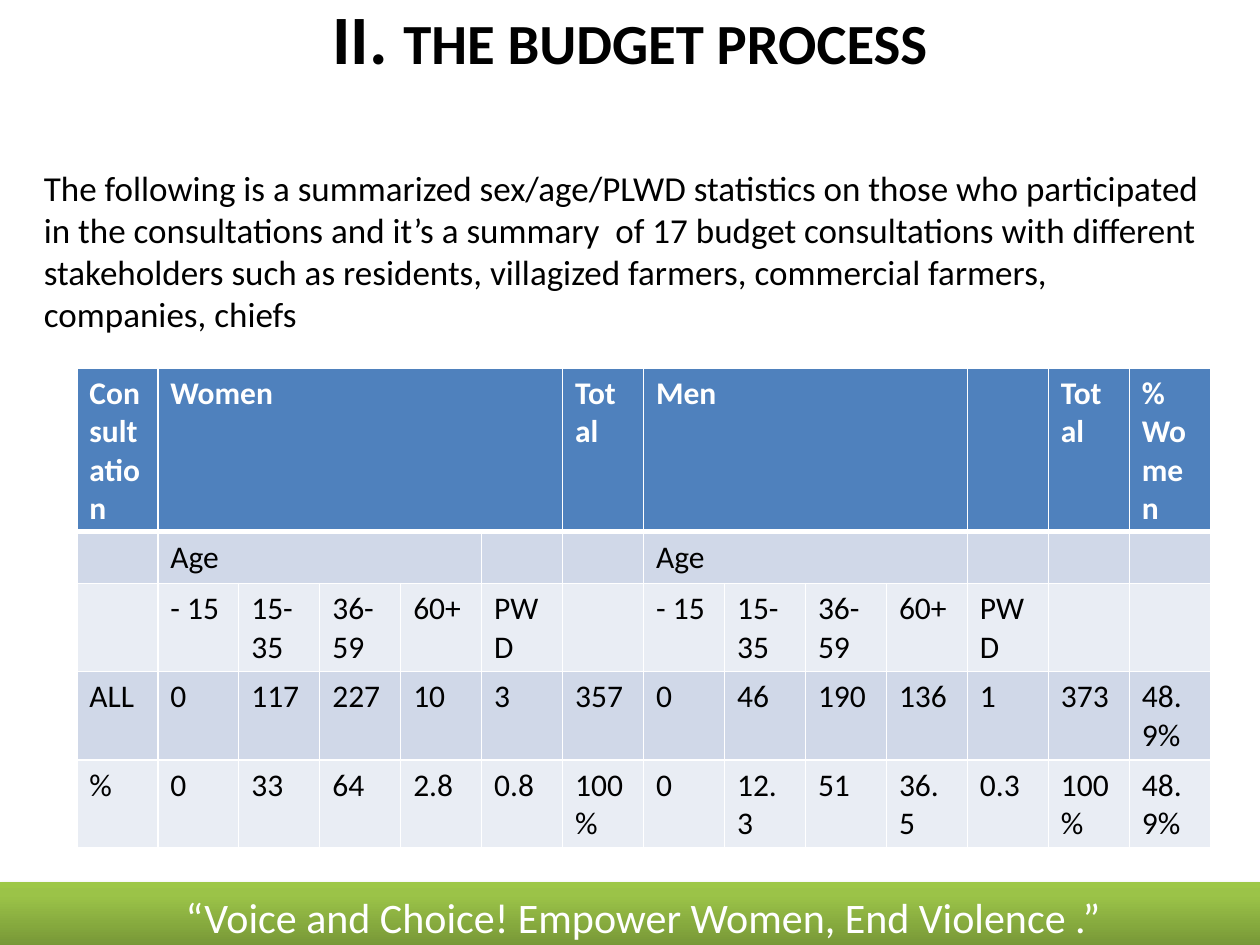
from pptx import Presentation
from pptx.dml.color import RGBColor
from pptx.enum.shapes import MSO_SHAPE
from pptx.enum.text import MSO_ANCHOR, PP_ALIGN
from pptx.oxml import parse_xml
from pptx.oxml.ns import nsdecls
from pptx.util import Inches, Pt

CENTER = PP_ALIGN.CENTER
BOTTOM = MSO_ANCHOR.BOTTOM
RECTANGLE = MSO_SHAPE.RECTANGLE
BLACK = RGBColor(0x00, 0x00, 0x00)
WHITE = RGBColor(0xFF, 0xFF, 0xFF)
HEADER_BLUE = RGBColor(0x4F, 0x81, 0xBD)
BAND_DARK = RGBColor(0xD0, 0xD8, 0xE8)
BAND_LIGHT = RGBColor(0xE9, 0xED, 0xF4)
GREEN_DARK = RGBColor(0x77, 0x97, 0x37)
GREEN_MIDDLE = RGBColor(0x9B, 0xC3, 0x48)
GREEN_LIGHT = RGBColor(0x9D, 0xC7, 0x46)


def add_text(paragraph, text, size, color=BLACK, bold=False):
    run = paragraph.add_run()
    run.text = text
    run.font.name = "Calibri"
    run.font.size = Pt(size)
    run.font.bold = bold
    run.font.color.rgb = color


presentation = Presentation()
presentation.slide_width = Inches(10)
presentation.slide_height = Inches(7.5)
slide = presentation.slides.add_slide(presentation.slide_layouts[6])

title = slide.shapes.add_textbox(Inches(0.5), Inches(0.25), Inches(9), Inches(0.7))
title_frame = title.text_frame
title_frame.word_wrap = True
title_frame.vertical_anchor = BOTTOM
title_frame.margin_bottom = Inches(0.33)
title_paragraph = title_frame.paragraphs[0]
title_paragraph.alignment = CENTER
add_text(title_paragraph, "II. ", 39.6, bold=True)
add_text(title_paragraph, "THE BUDGET PROCESS", 32.4, bold=True)

ages = ["- 15", "15-35", "36-59", "60+", "PWD"]
rows = [
    ["Consultation", "Women", "", "", "", "", "Total", "Men", "", "", "", "", "Total", "% Women"],
    ["", "Age", "", "", "", "", "", "Age", "", "", "", "", "", ""],
    ["", *ages, "", *ages, "", ""],
    ["ALL", "0", "117", "227", "10", "3", "357", "0", "46", "190", "136", "1", "373", "48.9%"],
    ["%", "0", "33", "64", "2.8", "0.8", "100%", "0", "12.3", "51", "36.5", "0.3", "100%", "48.9%"],
]
column_count = len(rows[0])
table = slide.shapes.add_table(
    len(rows), column_count, Inches(0.61), Inches(2.92), Inches(9), Inches(0.41) * len(rows)
).table
for column in table.columns:
    column.width = Inches(9 / column_count)

for row_index, row in enumerate(rows):
    is_header = row_index == 0
    fill_color = HEADER_BLUE if is_header else BAND_DARK if row_index % 2 else BAND_LIGHT
    for column_index, text in enumerate(row):
        cell = table.cell(row_index, column_index)
        properties = cell._tc.get_or_add_tcPr()
        for side in "LRTB":
            thick = (is_header and side == "B") or (row_index == 1 and side == "T")
            properties.append(parse_xml(
                f'<a:ln{side} {nsdecls("a")} w="{Pt(3 if thick else 1)}">'
                f'<a:solidFill><a:srgbClr val="{WHITE}"/></a:solidFill></a:ln{side}>'
            ))
        cell.fill.solid()
        cell.fill.fore_color.rgb = fill_color
        if text:
            add_text(cell.text_frame.paragraphs[0], text, 18,
                     color=WHITE if is_header else BLACK, bold=is_header)

for row_index, first, last in [(0, 1, 5), (0, 7, 10), (1, 1, 4), (1, 7, 10)]:
    table.cell(row_index, first).merge(table.cell(row_index, last))

body = slide.shapes.add_textbox(Inches(0.25), Inches(1.27), Inches(9.5), Inches(1.23))
body.text_frame.word_wrap = True
add_text(
    body.text_frame.paragraphs[0],
    "The following is a summarized sex/age/PLWD statistics on those who participated in the "
    "consultations and it’s a summary  of 17 budget consultations with different stakeholders "
    "such as residents, villagized farmers, commercial farmers, companies, chiefs",
    20,
)

banner = slide.shapes.add_shape(RECTANGLE, 0, Inches(7), Inches(10.21), Inches(0.51))
banner.line.fill.background()
banner.fill.gradient()
banner.fill.gradient_angle = 90
stops = banner._element.spPr.find(".//{*}gsLst")
for stop in list(stops):
    stops.remove(stop)
for position, color in [(0, GREEN_DARK), (80, GREEN_MIDDLE), (100, GREEN_LIGHT)]:
    stops.append(parse_xml(
        f'<a:gs {nsdecls("a")} pos="{position * 1000}"><a:srgbClr val="{color}"/></a:gs>'
    ))
banner._element.spPr.append(parse_xml(
    f'<a:effectLst {nsdecls("a")}>'
    f'<a:outerShdw blurRad="{Pt(3.1)}" dist="{Pt(1.8)}" dir="5400000" rotWithShape="0">'
    f'<a:srgbClr val="{BLACK}"><a:alpha val="35000"/></a:srgbClr></a:outerShdw></a:effectLst>'
))
banner_frame = banner.text_frame
banner_frame.word_wrap = True
banner_frame.vertical_anchor = MSO_ANCHOR.TOP
banner_paragraph = banner_frame.paragraphs[0]
banner_paragraph.alignment = CENTER
banner_paragraph.line_spacing = 1.07
add_text(banner_paragraph, "“Voice and Choice! Empower Women, End Violence .”", 24, color=WHITE)

presentation.save("out.pptx")
